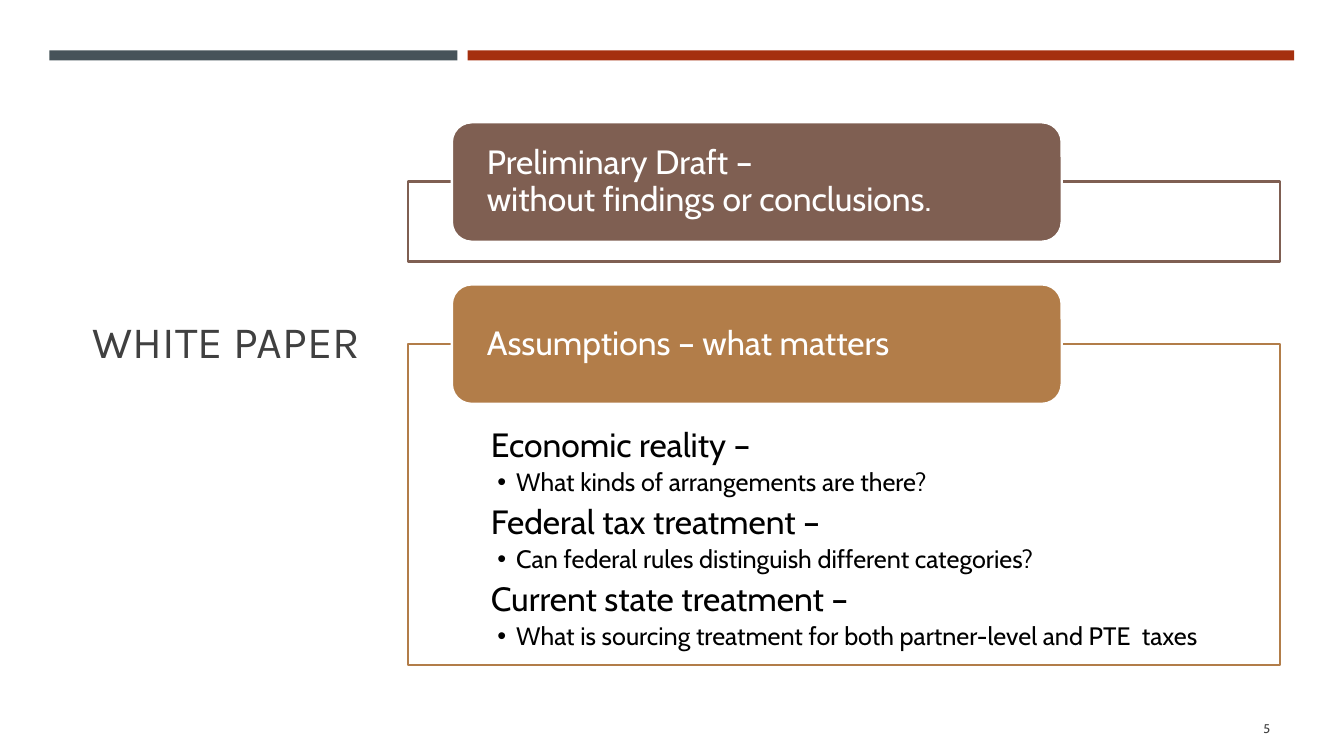
from lxml import etree
from pptx import Presentation
from pptx import util as u
from pptx.dml.color import RGBColor
from pptx.enum import shapes, text
from pptx.oxml.ns import qn

Pt = u.Pt
HUES = {"white": "FFFFFF", "black": "000000", "ink": "404040", "slate": "465359",
        "red": "A5300F", "brown": "7F5F52", "tan": "B27D49"}
KIND = shapes.MSO_SHAPE
MID = text.MSO_ANCHOR.MIDDLE
ALIGN = text.PP_ALIGN

POINTS = [
    ("Economic reality –", "What kinds of arrangements are there?"),
    ("Federal tax treatment –", "Can federal rules distinguish different categories?"),
    ("Current state treatment –",
     "What is sourcing treatment for both partner-level and PTE  taxes"),
]


def rgb(hue):
    return RGBColor.from_string(HUES[hue])


def place(shape, box):
    shape.left, shape.top, shape.width, shape.height = map(Pt, box)


def paint(shape, fill, line=None):
    shape.fill.solid()
    shape.fill.fore_color.rgb = rgb(fill)
    if line:
        shape.line.color.rgb = rgb(line)
        shape.line.width = Pt(1.75)
    else:
        shape.line.fill.background()


def block(slide, kind, box, fill, line=None):
    shape = slide.shapes.add_shape(kind, *map(Pt, box))
    shape.shadow.inherit = False
    paint(shape, fill, line)
    return shape


def pad(frame, left, top, right, base):
    frame.margin_left, frame.margin_top = Pt(left), Pt(top)
    frame.margin_right, frame.margin_bottom = Pt(right), Pt(base)
    frame.word_wrap = True
    frame.auto_size = text.MSO_AUTO_SIZE.NONE


def style(para, size, hue, font="Cabin", align=ALIGN.LEFT):
    para.alignment = align
    for run in para.runs:
        run.font.size = Pt(size)
        run.font.name = font
        run.font.color.rgb = rgb(hue)


def indent(para, left, first, mark=None):
    props = para._p.get_or_add_pPr()
    props.set("marL", str(Pt(left)))
    props.set("indent", str(Pt(first)))
    if mark:
        etree.SubElement(props, qn("a:buFont")).set("typeface", "Arial")
        etree.SubElement(props, qn("a:buChar")).set("char", mark)
    else:
        etree.SubElement(props, qn("a:buNone"))


def bars(slide, box):
    """Two-tone rule across the top."""
    left, top, width, height = box
    short, gap = 291.6, 7.2
    block(slide, KIND.RECTANGLE, (left, top, short, height), "slate")
    start = short + gap
    block(slide, KIND.RECTANGLE, (left + start, top, width - start, height), "red")


def title(slide, box):
    head = slide.shapes.title
    place(head, box)
    frame = head.text_frame
    frame.text = "WHITE PAPER"
    pad(frame, 7.2, 3.6, 7.2, 3.6)
    frame.vertical_anchor = MID
    style(frame.paragraphs[0], 32, "ink", "Karla")


def tab(slide, box, words, hue):
    """Rounded label that straddles the top edge of the panel at box."""
    left, top = box[:2]
    label = block(slide, KIND.ROUNDED_RECTANGLE,
                  (left + 31.1, top - 42.5, 435.7, 85.4), hue, "white")
    frame = label.text_frame
    frame.text = words
    pad(frame, 20.9, 4, 20.9, 4)
    frame.vertical_anchor = MID
    para = frame.paragraphs[0]
    para.line_spacing = 0.9
    style(para, 24, "white")


def draft(slide, box):
    """Empty panel with its label."""
    block(slide, KIND.RECTANGLE, box, "white", "brown")
    tab(slide, box, "Preliminary Draft –\vwithout findings or conclusions.", "brown")


def matters(slide, box):
    """Panel that holds the list, with its label."""
    body = slide.placeholders[1]
    place(body, box)
    paint(body, "white", "tan")
    frame = body.text_frame
    frame.text = "\n".join(line for pair in POINTS for line in pair)
    pad(frame, 48.3, 60.5, 48.3, 13.7)
    frame.vertical_anchor = text.MSO_ANCHOR.TOP
    for rank, para in enumerate(frame.paragraphs):
        sub = rank % 2 == 1
        para.line_spacing = 0.9
        para.space_before = Pt(0)
        para.space_after = Pt(6 if sub else 3.6)
        indent(para, 28.8, -13.5 if sub else -18, "•" if sub else None)
        style(para, 18 if sub else 24, "black")
    tab(slide, box, "Assumptions – what matters", "tan")


def number(slide, box):
    frame = slide.shapes.add_textbox(*map(Pt, box)).text_frame
    frame.text = "5"
    pad(frame, 7.2, 3.6, 7.2, 3.6)
    frame.vertical_anchor = MID
    style(frame.paragraphs[0], 9, "ink", align=ALIGN.RIGHT)


def main():
    deck = Presentation()
    deck.slide_width, deck.slide_height = Pt(960), Pt(540)
    slide = deck.slides.add_slide(deck.slide_layouts[1])
    bars(slide, (35.2, 36, 889.2, 7.2))
    title(slide, (59, 82, 240.5, 322.6))
    draft(slide, (291.6, 129.8, 622.8, 56.9))
    matters(slide, (291.6, 245.6, 622.8, 229.5))
    number(slide, (831.6, 506.2, 82.8, 28.8))
    deck.save("out.pptx")


if __name__ == "__main__":
    main()
